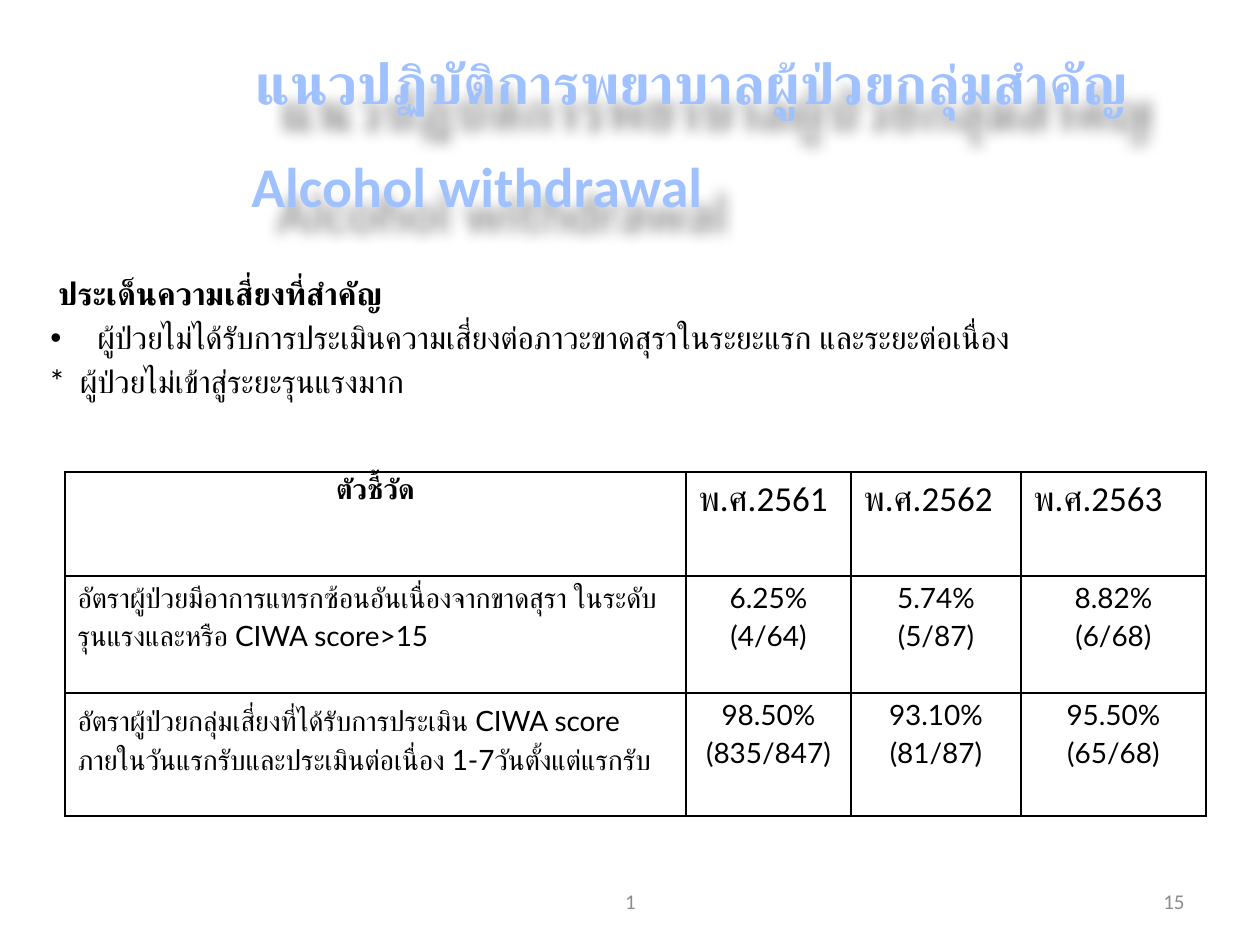
from dataclasses import dataclass

from lxml.etree import SubElement
from pptx import Presentation
from pptx.dml.color import RGBColor
from pptx.enum.shapes import MSO_SHAPE as Shape
from pptx.enum.text import MSO_ANCHOR as Anchor, PP_ALIGN as Align
from pptx.oxml.ns import qn
from pptx.util import Pt

SCALE = 914400 / 126


@dataclass(frozen=True)
class Theme:
    title: str = "A0C1FF"
    ink: str = "000000"
    muted: str = "8C8C8C"
    heading_font: str = "Calibri"
    body_font: str = "Lato"
    title_size: float = 32
    year_size: float = 20
    body_size: float = 18
    cell_size: float = 16
    footer_size: float = 12


THEME = Theme()
INDICATOR = "ตัวชี้วัด"
YEARS = ["พ.ศ.2561", "พ.ศ.2562", "พ.ศ.2563"]
RATES = [
    ["อัตราผู้ป่วยมีอาการแทรกซ้อนอันเนื่องจากขาดสุรา ในระดับรุนแรงและหรือ CIWA score>15",
     "6.25%\n(4/64)", "5.74%\n(5/87)", "8.82%\n(6/68)"],
    ["อัตราผู้ป่วยกลุ่มเสี่ยงที่ได้รับการประเมิน CIWA score ภายในวันแรกรับและประเมินต่อเนื่อง 1-7วันตั้งแต่แรกรับ",
     "98.50%\n(835/847)", "93.10%\n(81/87)", "95.50%\n(65/68)"],
]
RISKS = [
    " ประเด็นความเสี่ยงที่สำคัญ",
    "ผู้ป่วยไม่ได้รับการประเมินความเสี่ยงต่อภาวะขาดสุราในระยะแรก และระยะต่อเนื่อง",
    "*  ผู้ป่วยไม่เข้าสู่ระยะรุนแรงมาก",
]


def px(value):
    return round(value * SCALE)


def format_paragraph(paragraph, font, size, color, bold=False, align=Align.LEFT):
    paragraph.alignment = align
    for run in paragraph.runs:
        run.font.name = font
        run.font.size = Pt(size)
        run.font.bold = bold
        run.font.color.rgb = RGBColor.from_string(color)
        SubElement(run.font._element, qn("a:cs"), typeface=font)


def add_shadow(shape):
    shape.shadow.inherit = False
    effects = shape.element.spPr.find(qn("a:effectLst"))
    shadow = SubElement(effects, qn("a:outerShdw"), blurRad=str(px(14)),
                        dist=str(px(35)), dir="2700000", algn="tl", rotWithShape="0")
    color = SubElement(shadow, qn("a:srgbClr"), val=THEME.ink)
    SubElement(color, qn("a:alpha"), val="40000")


def add_title(slide, text, left, top, width, height):
    shape = slide.shapes.add_shape(Shape.ROUNDED_RECTANGLE, *map(px, (left, top, width, height)))
    shape.fill.background()
    shape.line.fill.background()
    add_shadow(shape)
    text_frame = shape.text_frame
    text_frame.text = text
    text_frame.word_wrap = True
    text_frame.vertical_anchor = Anchor.MIDDLE
    format_paragraph(text_frame.paragraphs[0], THEME.heading_font, THEME.title_size,
                     THEME.title, True, Align.CENTER)


def add_text(slide, text, left, top, width, height):
    text_frame = slide.shapes.add_textbox(*map(px, (left, top, width, height))).text_frame
    text_frame.text = text
    text_frame.word_wrap = True
    return text_frame


def add_risks(slide):
    text_frame = add_text(slide, "\n".join(RISKS), 38, 268, 1012, 184)
    for index, paragraph in enumerate(text_frame.paragraphs):
        format_paragraph(paragraph, THEME.body_font, THEME.body_size, THEME.ink, index == 0)
        paragraph.space_before = Pt(THEME.body_size * 0.2)
    properties = text_frame.paragraphs[1]._p.get_or_add_pPr()
    properties.set("marL", str(px(47)))
    properties.set("indent", str(-px(47)))
    SubElement(properties, qn("a:buFont"), typeface="Arial")
    SubElement(properties, qn("a:buChar"), char="•")


def add_footer(slide, text, left, width, align):
    text_frame = add_text(slide, text, left, 876, width, 50)
    text_frame.vertical_anchor = Anchor.MIDDLE
    format_paragraph(text_frame.paragraphs[0], THEME.heading_font, THEME.footer_size,
                     THEME.muted, align=align)


def add_borders(cell):
    properties = cell._tc.get_or_add_tcPr()
    for side in ("lnL", "lnR", "lnT", "lnB"):
        line = SubElement(properties, qn(f"a:{side}"), w=str(Pt(1)))
        fill = SubElement(line, qn("a:solidFill"))
        SubElement(fill, qn("a:srgbClr"), val=THEME.ink)


def format_cell(cell, row, column):
    is_header, is_label = row == 0, column == 0
    is_year = is_header and not is_label
    font = THEME.heading_font if is_year else THEME.body_font
    size = THEME.year_size if is_year else THEME.cell_size
    align = Align.CENTER if is_header == is_label else Align.LEFT
    for paragraph in cell.text_frame.paragraphs:
        format_paragraph(paragraph, font, size, THEME.ink, is_header and is_label, align)
        if not is_header:
            paragraph.line_spacing = 1.15
    if not is_header and not is_label:
        cell.margin_left = cell.margin_right = px(9)
    if not is_year and (row, column) != (2, 0):
        cell.margin_top = cell.margin_bottom = 0
    add_borders(cell)
    cell.fill.background()


def add_rate_table(slide):
    rows = [[INDICATOR, *YEARS], *RATES]
    widths, heights = [621, 165, 170, 185], [104, 117, 123]
    table = slide.shapes.add_table(len(rows), len(widths), px(65), px(472),
                                   px(sum(widths)), px(sum(heights))).table
    table.first_row = False
    table.horz_banding = False
    for column, width in zip(table.columns, widths):
        column.width = px(width)
    for row, height in zip(table.rows, heights):
        row.height = px(height)
    for row_index, values in enumerate(rows):
        for column_index, value in enumerate(values):
            cell = table.cell(row_index, column_index)
            cell.text_frame.text = value
            format_cell(cell, row_index, column_index)


def main():
    presentation = Presentation()
    presentation.slide_width = px(1260)
    presentation.slide_height = px(945)
    slide = presentation.slides.add_slide(presentation.slide_layouts[6])
    add_title(slide, "Alcohol withdrawal", 164, 145, 626, 81)
    add_risks(slide)
    add_footer(slide, "1", 431, 399, Align.CENTER)
    add_footer(slide, "15", 903, 294, Align.RIGHT)
    add_title(slide, " แนวปฏิบัติการพยาบาลผู้ป่วยกลุ่มสำคัญ", 165, 34, 1041, 97)
    add_rate_table(slide)
    presentation.save("out.pptx")


if __name__ == "__main__":
    main()
